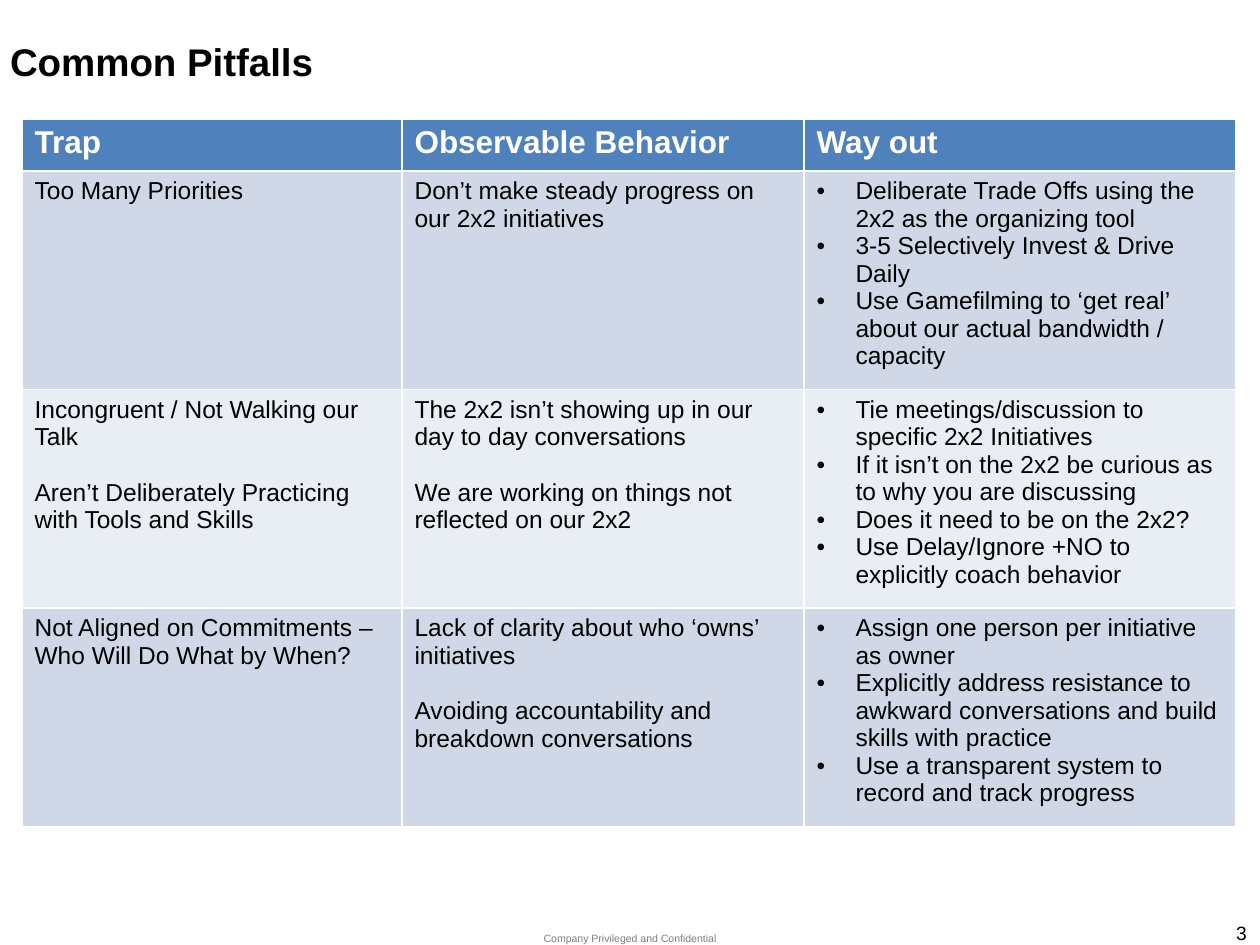
from dataclasses import dataclass

from lxml import etree
from pptx import Presentation
from pptx import util as u
from pptx.dml.color import RGBColor
from pptx.enum import text
from pptx.oxml.ns import qn

PX = 914400 / 126


def px(count):
    return u.Emu(round(count * PX))


@dataclass(frozen=True)
class Theme:
    font: str = "Arial"
    ink: str = "000000"
    muted: str = "808080"
    header_ink: str = "FFFFFF"
    header_fill: str = "4F81BD"
    bands: tuple = ("D0D8E8", "E9EDF4")
    title: int = 22
    header: int = 18
    body: int = 14
    number: int = 11
    footer: int = 6
    paragraph_gap: int = 16


HEADERS = ["Trap", "Observable Behavior", "Way out"]
PITFALLS = [
    (["Too Many Priorities"],
     ["Don’t make steady progress on our 2x2 initiatives"],
     ["Deliberate Trade Offs using the 2x2 as the organizing tool",
      "3-5 Selectively Invest & Drive Daily",
      "Use Gamefilming to ‘get real’ about our actual bandwidth / capacity"]),
    (["Incongruent / Not Walking our Talk",
      "Aren’t Deliberately Practicing with Tools and Skills"],
     ["The 2x2 isn’t showing up in our day to day conversations",
      "We are working on things not reflected on our 2x2"],
     ["Tie meetings/discussion to specific 2x2 Initiatives",
      "If it isn’t on the 2x2 be curious as to why you are discussing",
      "Does it need to be on the 2x2?",
      "Use Delay/Ignore +NO to explicitly coach behavior"]),
    (["Not Aligned on Commitments – Who Will Do What by When?"],
     ["Lack of clarity about who ‘owns’ initiatives",
      "Avoiding accountability and breakdown conversations"],
     ["Assign one person per initiative as owner",
      "Explicitly address resistance to awkward conversations and build "
      "skills with practice",
      "Use a transparent system to record and track progress"]),
]


class SlideBuilder:
    def __init__(self, slide, theme):
        self.slide = slide
        self.theme = theme

    def style(self, para, size, color, bold=False):
        for span in para.runs:
            font = span.font
            font.name, font.size, font.bold = self.theme.font, u.Pt(size), bold
            font.color.rgb = RGBColor.from_string(color)

    def text_box(self, bounds, words, size, color, align, anchor, margins, bold=False):
        """Bounds are left, top, width, height; margins are side and top/bottom."""
        box = self.slide.shapes.add_textbox(*map(px, bounds))
        frame = box.text_frame
        frame.word_wrap = True
        frame.vertical_anchor = anchor
        side, edge = map(px, margins)
        frame.margin_left = frame.margin_right = side
        frame.margin_top = frame.margin_bottom = edge
        frame.text = words
        para = frame.paragraphs[0]
        para.alignment = align
        self.style(para, size, color, bold)

    def bullet(self, para, indent):
        props = para._p.get_or_add_pPr()
        props.set("marL", str(px(indent)))
        props.set("indent", str(-px(indent)))
        etree.SubElement(props, qn("a:buFont")).set("typeface", self.theme.font)
        etree.SubElement(props, qn("a:buChar")).set("char", "•")

    def cell(self, cell, lines, fill, size, color, bold=False, bulleted=False):
        cell.fill.solid()
        cell.fill.fore_color.rgb = RGBColor.from_string(fill)
        cell.text_frame.text = "\n".join(lines)
        for index, para in enumerate(cell.text_frame.paragraphs):
            if bulleted:
                self.bullet(para, 39)
            elif index:
                para.space_before = u.Pt(self.theme.paragraph_gap)
            self.style(para, size, color, bold)

    def table(self, left, top, widths, heights, headers, rows):
        """Draw a header row and banded rows; the last column is bulleted."""
        theme = self.theme
        grid = self.slide.shapes.add_table(
            len(heights), len(widths), px(left), px(top),
            px(sum(widths)), px(sum(heights))).table
        for column, width in zip(grid.columns, widths):
            column.width = px(width)
        for row, height in zip(grid.rows, heights):
            row.height = px(height)
        for col, header in enumerate(headers):
            self.cell(grid.cell(0, col), [header], theme.header_fill,
                      theme.header, theme.header_ink, bold=True)
        for index, row in enumerate(rows):
            band = theme.bands[index % len(theme.bands)]
            for col, lines in enumerate(row):
                self.cell(grid.cell(index + 1, col), lines, band, theme.body,
                          theme.ink, bulleted=col == len(widths) - 1)


def main():
    deck = Presentation()
    deck.slide_width, deck.slide_height = px(1260), px(945)
    theme = Theme()
    page = SlideBuilder(deck.slides.add_slide(deck.slide_layouts[6]), theme)
    align, anchor = text.PP_ALIGN, text.MSO_ANCHOR

    page.text_box((533, 932, 194, 13), "Company Privileged and Confidential",
                  theme.footer, theme.muted, align.CENTER, anchor.TOP, (0, 0))
    page.text_box((1121, 920, 139, 25), "3", theme.number, theme.ink,
                  align.RIGHT, anchor.MIDDLE, (13, 6))
    page.text_box((10, 32, 1231, 58), "Common Pitfalls", theme.title, theme.ink,
                  align.LEFT, anchor.BOTTOM, (0, 6), bold=True)
    page.table(22, 119, (380, 402, 432), (52, 205, 205, 205), HEADERS, PITFALLS)
    deck.save("out.pptx")


if __name__ == "__main__":
    main()
